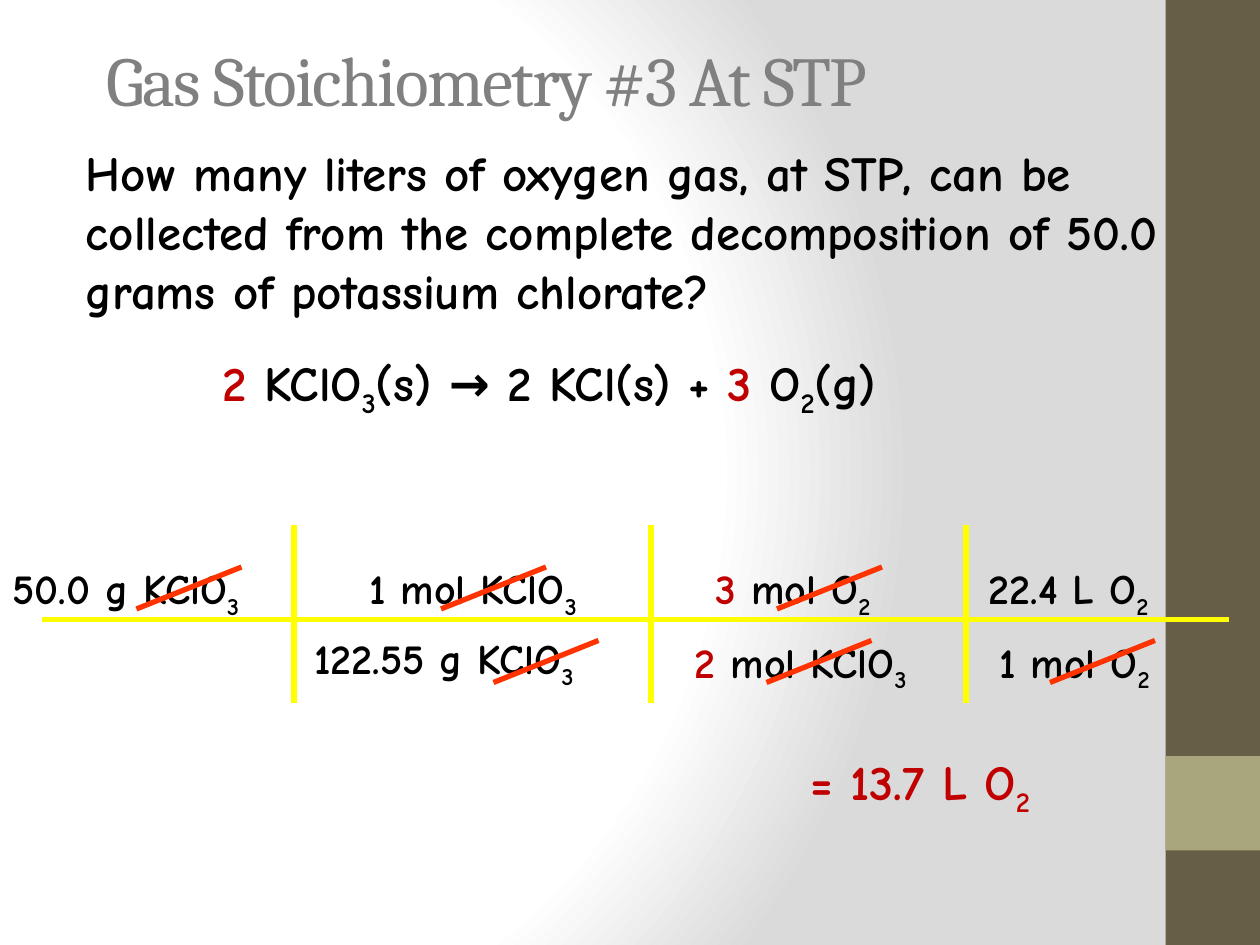
"""Build the gas stoichiometry slide with its conversion grid."""
from lxml import etree
from pptx import Presentation
from pptx.dml.color import RGBColor
from pptx.enum.shapes import MSO_CONNECTOR, MSO_SHAPE
from pptx.enum.text import MSO_ANCHOR
from pptx.oxml import parse_xml
from pptx.oxml.ns import qn
from pptx.util import Pt

STRAIGHT = MSO_CONNECTOR.STRAIGHT
RECTANGLE = MSO_SHAPE.RECTANGLE
TOP, MIDDLE = MSO_ANCHOR.TOP, MSO_ANCHOR.MIDDLE
BLACK, RED, GREY = "000000", "C00000", "808080"
YELLOW, ORANGE = "FFFF00", "FF3300"
BROWN, OLIVE = "675E47", "A9A57C"
GRADIENT = """
<a:gradFill xmlns:a="http://schemas.openxmlformats.org/drawingml/2006/main" rotWithShape="1">
  <a:gsLst>
    <a:gs pos="0"><a:srgbClr val="FFFFFF"/></a:gs>
    <a:gs pos="75000"><a:srgbClr val="FFFFFF"/></a:gs>
    <a:gs pos="100000"><a:srgbClr val="DADADA"/></a:gs>
  </a:gsLst>
  <a:path path="circle"><a:fillToRect l="20000" t="50000" r="100000" b="50000"/></a:path>
</a:gradFill>"""

presentation = Presentation()
presentation.slide_width, presentation.slide_height = Pt(720), Pt(540)
slide = presentation.slides.add_slide(presentation.slide_layouts[6])


def add_text(text, left, top, width, height, size=24, font="Comic Neue",
             color=BLACK, bold=True, anchor=TOP, spacing=None):
    """Add a text box; '|' splits runs, a leading '_' lowers and '*' reddens a run."""
    frame = slide.shapes.add_textbox(Pt(left), Pt(top), Pt(width), Pt(height)).text_frame
    frame.word_wrap = True
    frame.vertical_anchor = anchor
    for part in text.split("|"):
        run = frame.paragraphs[0].add_run()
        run.text = part.lstrip("_*")
        run.font.size, run.font.name, run.font.bold = Pt(size), font, bold
        run.font.color.rgb = RGBColor.from_string(RED if part.startswith("*") else color)
        properties = run._r.get_or_add_rPr()
        if part.startswith("_"):
            properties.set("baseline", "-25000")
        if spacing is not None:
            properties.set("spc", str(spacing * 100))


def add_line(x1, y1, x2, y2, color):
    """Add a straight line without a shadow."""
    line = slide.shapes.add_connector(STRAIGHT, Pt(x1), Pt(y1), Pt(x2), Pt(y2))
    line.line.color.rgb = RGBColor.from_string(color)
    line.line.width = Pt(3)
    etree.SubElement(line._element.spPr, qn("a:effectLst"))


slide.background.fill.solid()
background = slide._element.find(".//" + qn("p:bgPr"))
background.replace(background[0], parse_xml(GRADIENT))

for top, height, color in [(0, 540, BROWN), (432, 54, OLIVE)]:
    band = slide.shapes.add_shape(RECTANGLE, Pt(666), Pt(top), Pt(54), Pt(height))
    band.shadow.inherit = False
    band.fill.solid()
    band.fill.fore_color.rgb = RGBColor.from_string(color)
    band.line.fill.background()

add_text("Gas Stoichiometry #3 At STP", 54, 0, 612, 90, size=40, font="Cambria",
         color=GREY, bold=False, anchor=MIDDLE, spacing=-1)
add_text("How many liters of oxygen gas, at STP, can be collected from the complete "
         "decomposition of 50.0 grams of potassium chlorate?", 42, 78, 649.5, 108, size=28)
add_text("*2| KClO|_3|(s) → 2 KCl(s) + |*3| O|_2|(g)", 120, 198, 462, 41, size=28)

add_line(24, 354, 702, 354, YELLOW)
for x in (168, 372, 552):
    add_line(x, 300, x, 402, YELLOW)

factors = [
    ("50.0 g KClO|_3", 0, 318, 167),
    ("1 mol KClO|_3", 204, 318, 153),
    ("122.55 g KClO|_3", 172.5, 358, 197),
    ("*3| mol O|_2", 402, 318, 117),
    ("*2| mol KClO|_3", 390, 360, 153),
    ("22.4 L O|_2", 558, 318, 132),
    ("1 mol O|_2", 564, 360, 117),
]
for text, left, top, width in factors:
    add_text(text, left, top, width, 36)

for bottom, starts in [(348, (78, 252, 444)), (390, (282, 438, 600))]:
    for x in starts:
        add_line(x, bottom, x + 60, bottom - 24, ORANGE)

add_text("= 13.7 L O|_2", 456, 426, 240, 41, size=28, color=RED)

presentation.save("out.pptx")
